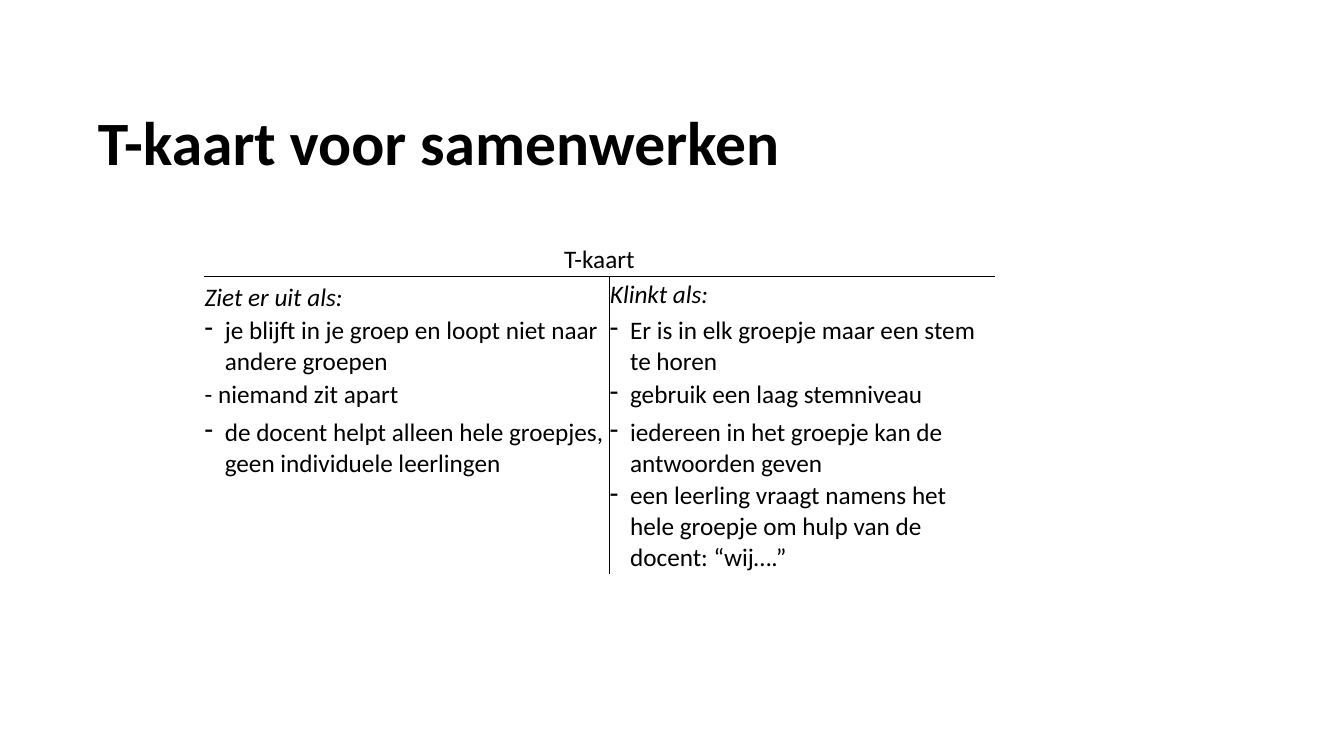
from lxml import etree
from pptx import Presentation
from pptx.dml.color import RGBColor
from pptx.enum import text
from pptx.oxml import ns
from pptx.util import Inches, Pt

BLACK = RGBColor(0, 0, 0)
TITLE = "T-kaart voor samenwerken"
HEADER = "T-kaart"
HEADINGS = ("Ziet er uit als:", "Klinkt als:")
BEHAVIOURS = [
    ("je blijft in je groep en loopt niet naar andere groepen",
     "Er is in elk groepje maar een stem te horen"),
    ("- niemand zit apart", "gebruik een laag stemniveau"),
    ("de docent helpt alleen hele groepjes, geen individuele leerlingen",
     "iedereen in het groepje kan de antwoorden geven"),
    ("", "een leerling vraagt namens het hele groepje om hulp van de docent: “wij….”"),
]
COLUMN_WIDTHS = (4.02, 3.83)
ROW_HEIGHTS = (0.38, 0.38, 0.62, 0.38, 0.62, 0.93)
ANCHORS = ("BOTTOM", "BOTTOM", "BOTTOM", "TOP", "TOP", "TOP")
NO_STYLE = "{2D5ABB26-0587-4C30-8999-92F81FD0307C}"
TITLE_FONT = {"name": "Calibri", "size": Pt(44), "bold": True}
CELL_FONT = {"name": "Calibri", "size": Pt(18), "bold": False}
MARGINS = ("margin_left", "margin_right", "margin_top", "margin_bottom")


def apply(target, values):
    """Set each attribute named in values."""
    for name, value in values.items():
        setattr(target, name, value)


def write(para, words, font, italic=False):
    """Add formatted black words to a paragraph."""
    span = para.add_run()
    span.text = words
    apply(span.font, {**font, "italic": italic})
    span.font.color.rgb = BLACK


def add_dash(para):
    """Give a paragraph a hanging dash bullet."""
    properties = para._p.get_or_add_pPr()
    properties.set("marL", str(Inches(0.2)))
    properties.set("indent", str(-Inches(0.2)))
    etree.SubElement(properties, ns.qn("a:buChar"), char="-")


def add_borders(cell, sides):
    """Draw thin black lines on the given sides of a cell."""
    properties = cell._tc.get_or_add_tcPr()
    for side in "LRTB":
        line = etree.SubElement(properties, ns.qn(f"a:ln{side}"), w=str(Pt(0.5)))
        if side in sides:
            fill = etree.SubElement(line, ns.qn("a:solidFill"))
            etree.SubElement(fill, ns.qn("a:srgbClr"), val=str(BLACK))
        else:
            etree.SubElement(line, ns.qn("a:noFill"))


def border_sides(row, column):
    """Return the sides that form the T of the card."""
    if row == 0:
        return "B"
    top = "T" if row == 1 else ""
    return top + ("L" if column else "R" if row == 1 else "")


def add_title(page):
    """Place and format the title."""
    title = page.shapes.title
    apply(title, dict(zip(("left", "top", "width", "height"),
                          map(Inches, (0.92, 0.72, 11.5, 1.45)))))
    frame = title.text_frame
    apply(frame, {"vertical_anchor": text.MSO_ANCHOR.MIDDLE, "word_wrap": True})
    apply(frame, dict.fromkeys(MARGINS, Inches(0.05)))
    para = frame.paragraphs[0]
    apply(para, {"line_spacing": 0.9, "alignment": text.PP_ALIGN.LEFT})
    write(para, TITLE, TITLE_FONT)


def add_card(page):
    """Build the T-card table."""
    rows = [(HEADER, ""), HEADINGS, *BEHAVIOURS]
    frame = page.shapes.add_table(
        len(rows), len(COLUMN_WIDTHS), Inches(2.02), Inches(2.36),
        Inches(sum(COLUMN_WIDTHS)), Inches(sum(ROW_HEIGHTS)))
    table = frame.table
    apply(table, {"first_row": False, "horz_banding": False})
    table._tbl.tblPr.find(ns.qn("a:tableStyleId")).text = NO_STYLE
    for column, width in zip(table.columns, COLUMN_WIDTHS):
        column.width = Inches(width)
    for row, height in zip(table.rows, ROW_HEIGHTS):
        row.height = Inches(height)
    table.cell(0, 0).merge(table.cell(0, 1))
    for r, words_in_row in enumerate(rows):
        for c, words in enumerate(words_in_row):
            cell = table.cell(r, c)
            anchor = "MIDDLE" if (r, c) == (1, 1) else ANCHORS[r]
            cell.vertical_anchor = text.MSO_ANCHOR[anchor]
            apply(cell, dict.fromkeys(MARGINS, Inches(0.01)))
            add_borders(cell, border_sides(r, c))
            cell.fill.background()
            if not words:
                continue
            para = cell.text_frame.paragraphs[0]
            para.alignment = text.PP_ALIGN.LEFT if r else text.PP_ALIGN.CENTER
            if r > 1 and not words.startswith("-"):
                add_dash(para)
            write(para, words, CELL_FONT, italic=r == 1)


def main():
    """Create the slide and save it."""
    deck = Presentation()
    apply(deck, {"slide_width": Inches(13.33), "slide_height": Inches(7.5)})
    page = deck.slides.add_slide(deck.slide_layouts.get_by_name("Title Only"))
    add_title(page)
    add_card(page)
    deck.save("out.pptx")


if __name__ == "__main__":
    main()
